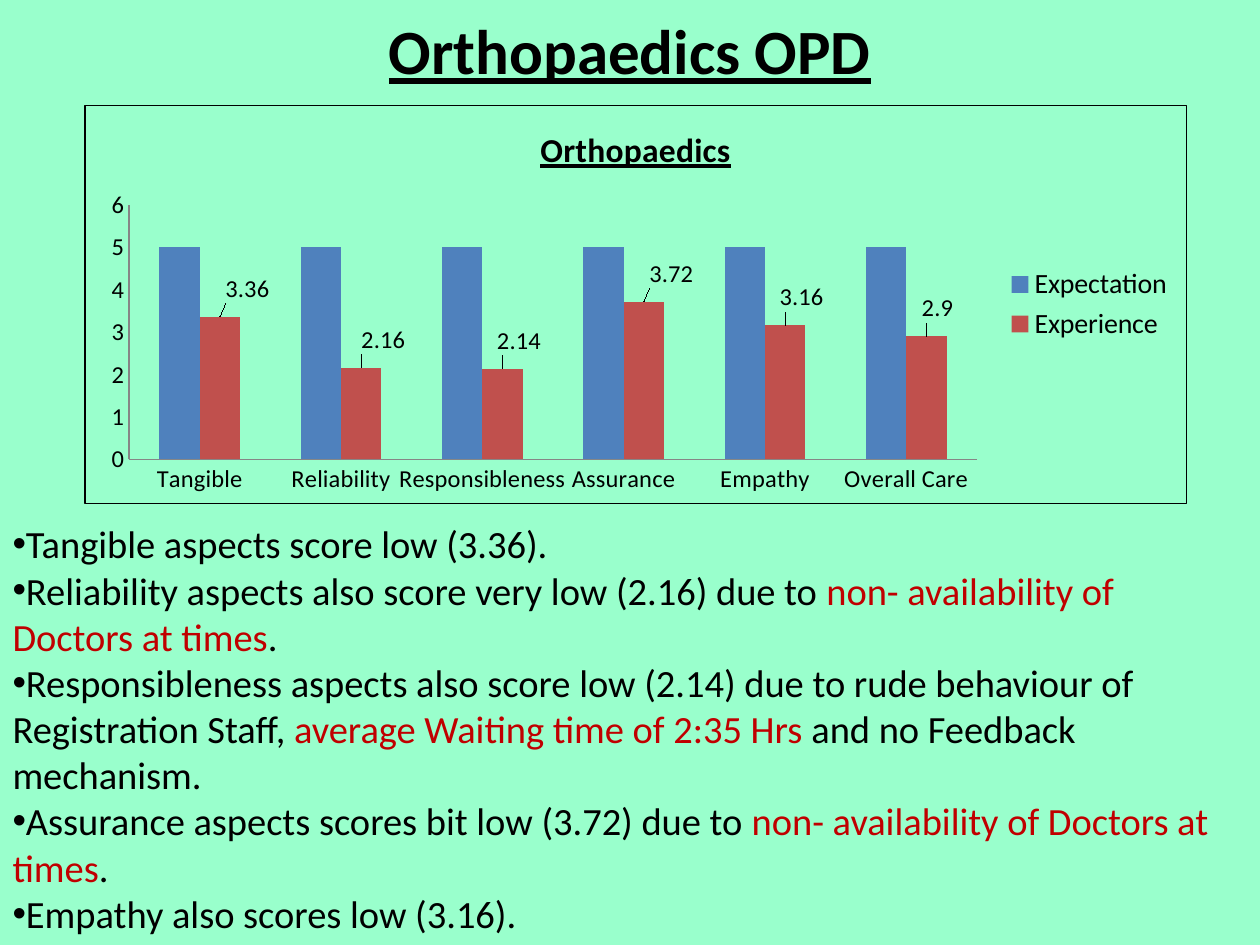
from lxml import etree
from pptx import Presentation
from pptx.chart.data import CategoryChartData
from pptx.dml.color import RGBColor
from pptx.enum.chart import XL_CHART_TYPE, XL_LABEL_POSITION, XL_LEGEND_POSITION, XL_TICK_MARK
from pptx.enum.text import MSO_ANCHOR, MSO_AUTO_SIZE, PP_ALIGN
from pptx.oxml import parse_xml
from pptx.oxml.ns import qn
from pptx.util import Inches, Pt

COLUMNS = XL_CHART_TYPE.COLUMN_CLUSTERED
OUTSIDE_END = XL_LABEL_POSITION.OUTSIDE_END
RIGHT = XL_LEGEND_POSITION.RIGHT
NO_TICK = XL_TICK_MARK.NONE
MIDDLE, TOP = MSO_ANCHOR.MIDDLE, MSO_ANCHOR.TOP
FIXED = MSO_AUTO_SIZE.NONE
CENTER, LEFT = PP_ALIGN.CENTER, PP_ALIGN.LEFT

FONT = "Calibri"
BLACK, RED, MINT, GREY = "000000", "C00000", "99FFCC", "868686"
TITLE_BOX = (0.5, 0.08, 9, 0.62)
CHART_BOX = (0.67, 0.83, 8.75, 3.17)
LIST_BOX = (0, 4.08, 9.75, 3.42)

CATEGORIES = ["Tangible", "Reliability", "Responsibleness", "Assurance", "Empathy", "Overall Care"]
SERIES = [
    ("Expectation", [5] * 6, "4F81BD"),
    ("Experience", [3.36, 2.16, 2.14, 3.72, 3.16, 2.9], "C0504D"),
]
LABEL_SHIFTS = [0.025, 0.02, 0.015, 0.025, 0.015, 0.01]
FINDINGS = [
    [("Tangible aspects score low (3.36).", BLACK)],
    [("Reliability aspects also score very low (2.16) due to ", BLACK),
     ("non- availability of Doctors at times", RED), (".", BLACK)],
    [("Responsibleness aspects also score low (2.14) due to rude behaviour of Registration Staff, ", BLACK),
     ("average Waiting time of 2:35 Hrs", RED), (" and no Feedback mechanism.", BLACK)],
    [("Assurance aspects scores bit low (3.72) due to ", BLACK),
     ("non- availability of Doctors at times", RED), (".", BLACK)],
    [("Empathy also scores low (3.16).", BLACK)],
]


def color(value):
    """Turn a hex string into a colour."""
    return RGBColor.from_string(value)


def style_font(font, size, ink=BLACK, bold=False, underline=False):
    """Format a font."""
    font.name, font.size = FONT, Pt(size)
    font.bold, font.underline = bold, underline
    font.color.rgb = color(ink)


def add_text(para, text, **style):
    """Add a formatted span to a paragraph."""
    span = para.add_run()
    span.text = text
    style_font(span.font, **style)


def place(holder, box, anchor):
    """Move a placeholder to a box and return its text frame."""
    holder.left, holder.top, holder.width, holder.height = map(Inches, box)
    frame = holder.text_frame
    frame.word_wrap = True
    frame.auto_size = FIXED
    frame.vertical_anchor = anchor
    return frame


def add_title(page, box):
    """Fill the title placeholder."""
    para = place(page.shapes.title, box, MIDDLE).paragraphs[0]
    para.alignment = CENTER
    add_text(para, "Orthopaedics OPD", size=36, bold=True, underline=True)


def add_findings(page, box):
    """Fill the body placeholder with the bulleted findings."""
    frame = place(page.placeholders[1], box, TOP)
    for index, spans in enumerate(FINDINGS):
        para = frame.add_paragraph() if index else frame.paragraphs[0]
        para.alignment = LEFT
        para.space_before = Pt(0)
        properties = para._p.get_or_add_pPr()
        properties.set("marL", "0")
        properties.set("indent", "0")
        etree.SubElement(properties, qn("a:buFont")).set("typeface", "Arial")
        etree.SubElement(properties, qn("a:buChar")).set("char", "•")
        for text, ink in spans:
            add_text(para, text, size=22, ink=ink)


def manual_layout(**settings):
    """Build a chart layout from its settings."""
    layout = etree.Element(qn("c:layout"))
    manual = etree.SubElement(layout, qn("c:manualLayout"))
    for name, value in settings.items():
        etree.SubElement(manual, qn(f"c:{name}")).set("val", str(value))
    return layout


def style_axis(axis):
    """Give an axis plain labels, a thin line and no ticks."""
    axis.major_tick_mark = axis.minor_tick_mark = NO_TICK
    axis.has_major_gridlines = False
    axis.format.line.color.rgb = color(GREY)
    axis.format.line.width = Pt(0.75)
    style_font(axis.tick_labels.font, 14)


def add_labels(series):
    """Show the values above the bars, nudged to the right."""
    labels = series.data_labels
    labels.show_value = True
    labels.position = OUTSIDE_END
    style_font(labels.font, 14)
    for index, shift in enumerate(LABEL_SHIFTS):
        label = series.points[index].data_label
        style_font(label.font, 14)
        label.position = OUTSIDE_END
        node = labels._element.findall(qn("c:dLbl"))[index]
        node.find(qn("c:idx")).addnext(manual_layout(x=shift, y=-0.02))


def add_border(chart):
    """Draw a thin black frame round the chart."""
    border = parse_xml(
        '<c:spPr xmlns:c="http://schemas.openxmlformats.org/drawingml/2006/chart" '
        'xmlns:a="http://schemas.openxmlformats.org/drawingml/2006/main"><a:noFill/>'
        f'<a:ln w="{Pt(0.75)}"><a:solidFill><a:srgbClr val="{BLACK}"/></a:solidFill></a:ln></c:spPr>')
    chart._chartSpace.find(qn("c:txPr")).addprevious(border)


def add_scores(page, box):
    """Add the chart of expectation against experience."""
    data = CategoryChartData()
    data.categories = CATEGORIES
    for name, values, _ in SERIES:
        data.add_series(name, values)
    chart = page.shapes.add_chart(COLUMNS, *map(Inches, box), data).chart
    style_font(chart.font, 16)
    add_border(chart)

    chart.has_title = True
    add_text(chart.chart_title.text_frame.paragraphs[0], "Orthopaedics",
             size=19.2, bold=True, underline=True)
    chart.chart_title.include_in_layout = False
    chart.has_legend = True
    chart.legend.position = RIGHT
    chart.legend.include_in_layout = False
    style_font(chart.legend.font, 16)

    style_axis(chart.category_axis)
    style_axis(chart.value_axis)
    chart.value_axis.minimum_scale, chart.value_axis.maximum_scale = 0, 6
    chart.value_axis.major_unit = 1

    plot = chart.plots[0]
    plot.gap_width, plot.overlap = 150, 0
    plot.vary_by_categories = False
    for series, (_, _, ink) in zip(plot.series, SERIES):
        series.format.fill.solid()
        series.format.fill.fore_color.rgb = color(ink)
    add_labels(plot.series[1])

    area = chart._chartSpace.chart.plotArea
    for old in area.findall(qn("c:layout")):
        area.remove(old)
    area.insert(0, manual_layout(layoutTarget="inner", xMode="edge", yMode="edge",
                                 x=0.04, y=0.25, w=0.77, h=0.64))


def main():
    """Build and save the deck."""
    deck = Presentation()
    deck.slide_width, deck.slide_height = Inches(10), Inches(7.5)
    page = deck.slides.add_slide(deck.slide_layouts[1])
    page.background.fill.solid()
    page.background.fill.fore_color.rgb = color(MINT)
    add_title(page, TITLE_BOX)
    add_scores(page, CHART_BOX)
    add_findings(page, LIST_BOX)
    deck.save("out.pptx")


if __name__ == "__main__":
    main()
